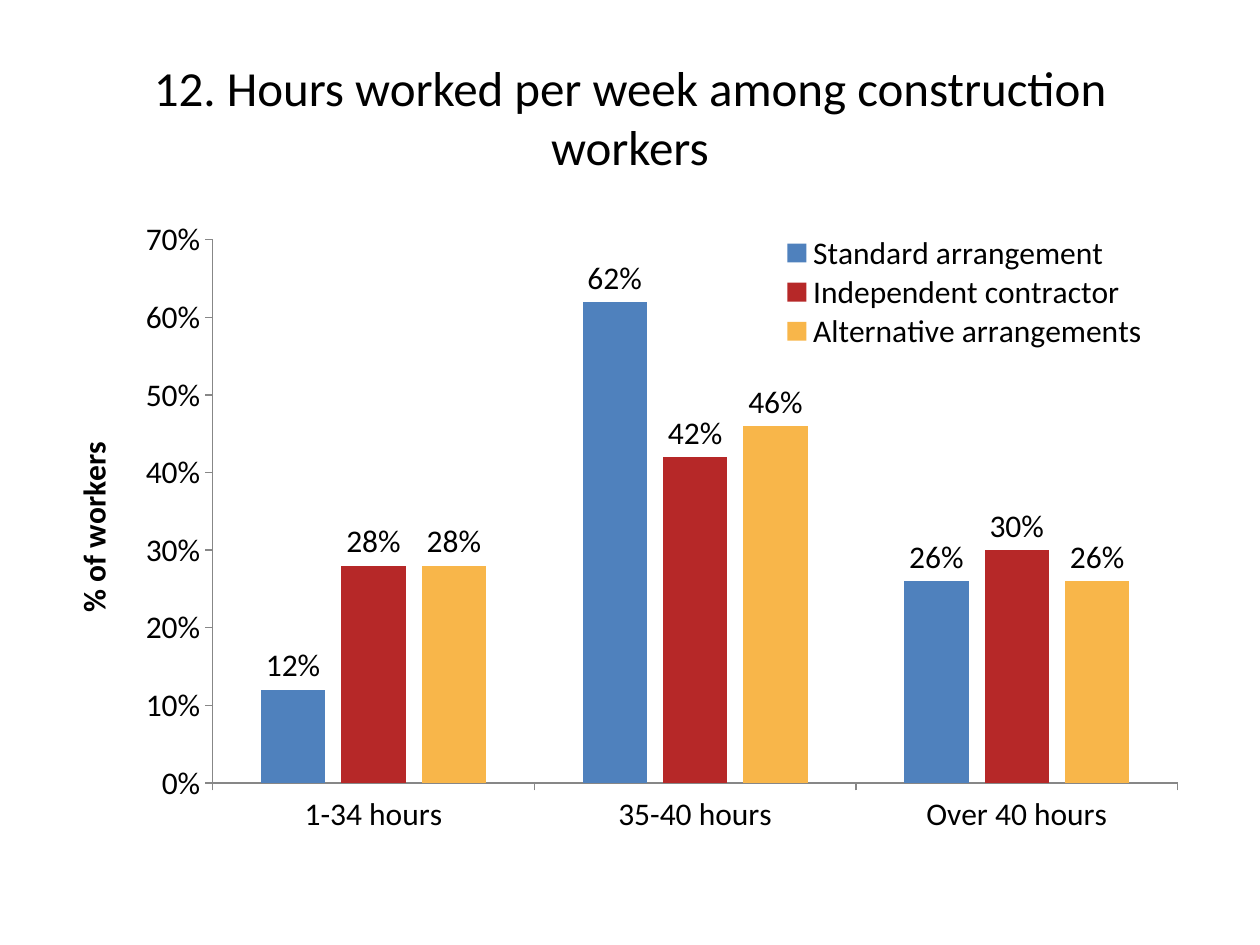
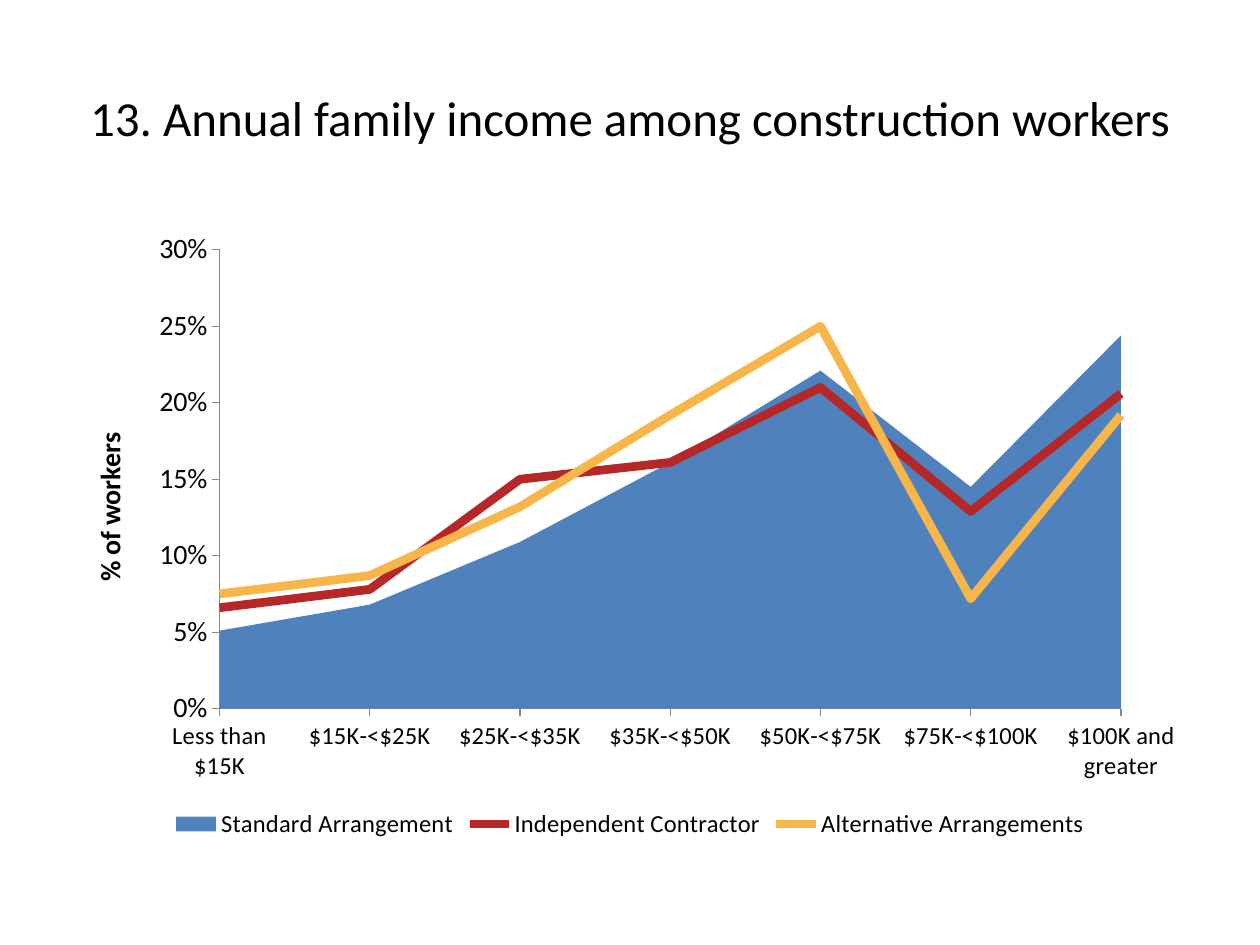
from pptx import Presentation, util as u
from pptx.chart.data import CategoryChartData
from pptx.dml.color import RGBColor
from pptx.enum import chart as ch, text
from pptx.oxml import parse_xml
from pptx.oxml.ns import nsdecls, qn

FONT = "Calibri"
BLACK, GRAY = "000000", "878787"
COLORS = ["4F81BD", "B62828", "F8B64A"]
PERCENT = '#,##0"%"'


def color(code):
    return RGBColor.from_string(code)


def place(parent, index, box, inner=""):
    """Give a plot area or legend a fixed box, as shares of the chart."""
    for old in parent.findall(qn("c:layout")):
        parent.remove(old)
    modes = "".join(f'<c:{side}Mode val="edge"/>' for side in "xy")
    sizes = "".join(f'<c:{side} val="{size}"/>' for side, size in zip("xywh", box))
    parent.insert(index, parse_xml(
        f'<c:layout {nsdecls("c")}><c:manualLayout>{inner}{modes}{sizes}'
        "</c:manualLayout></c:layout>"))


hours = dict(
    title="12. Hours worked per week among construction workers",
    kind=ch.XL_CHART_TYPE.COLUMN_CLUSTERED, size=18, val_size=18, top=70, step=10,
    plot=(0.132, 0.031, 0.851, 0.871), legend=ch.XL_LEGEND_POSITION.TOP,
    cats=["1-34 hours", "35-40 hours", "Over 40 hours"],
    series={
        "Standard arrangement": (12, 62, 26),
        "Independent contractor": (28, 42, 30),
        "Alternative arrangements": (28, 46, 26),
    })
income = dict(
    title="13. Annual family income among construction workers",
    kind=ch.XL_CHART_TYPE.AREA_STACKED, size=14, val_size=16, top=30, step=5,
    plot=(0.138, 0.047, 0.795, 0.736), legend=ch.XL_LEGEND_POSITION.BOTTOM,
    cats=["Less than $15K", "$15K-<$25K", "$25K-<$35K", "$35K-<$50K",
          "$50K-<$75K", "$75K-<$100K", "$100K and greater"],
    series={
        "Standard Arrangement": (5.1, 6.8, 10.9, 16.1, 22.1, 14.5, 24.4),
        "Independent Contractor": (6.6, 7.8, 15, 16.1, 21, 12.9, 20.6),
        "Alternative Arrangements": (7.5, 8.7, 13.2, 19.2, 25, 7.2, 19.2),
    })

deck = Presentation()
deck.slide_width, deck.slide_height = u.Inches(10), u.Inches(7.5)
charts = []

# Title, chart and axes, alike on both slides
for page in (hours, income):
    slide = deck.slides.add_slide(deck.slide_layouts[6])
    frame = slide.shapes.add_textbox(
        u.Inches(0.5), u.Inches(0.3), u.Inches(9), u.Inches(1.25)).text_frame
    frame.word_wrap = True
    frame.vertical_anchor = text.MSO_ANCHOR.MIDDLE
    title = frame.paragraphs[0]
    title.text = page["title"]
    title.alignment = text.PP_ALIGN.CENTER
    title.font.name, title.font.size = FONT, u.Pt(28)
    title.font.color.rgb = color(BLACK)

    data = CategoryChartData()
    data.categories = page["cats"]
    for name, values in page["series"].items():
        data.add_series(name, values)
    chart = slide.shapes.add_chart(
        page["kind"], u.Inches(0.5), u.Inches(1.75),
        u.Inches(9), u.Inches(4.95), data).chart
    charts.append(chart)
    chart.has_title = False
    chart.font.name, chart.font.size = FONT, u.Pt(page["size"])
    chart.font.color.rgb = color(BLACK)
    chart.plots[0].vary_by_categories = False
    place(chart.element.find(".//" + qn("c:plotArea")), 0, page["plot"],
          '<c:layoutTarget val="inner"/>')

    chart.has_legend = True
    chart.legend.position = page["legend"]
    chart.legend.include_in_layout = False

    for axis in (chart.category_axis, chart.value_axis):
        axis.has_major_gridlines = False
        axis.major_tick_mark = ch.XL_TICK_MARK.OUTSIDE
        axis.minor_tick_mark = ch.XL_TICK_MARK.NONE
        axis.format.line.color.rgb = color(GRAY)
        axis.format.line.width = u.Pt(0.75)
    scale = chart.value_axis
    scale.minimum_scale, scale.maximum_scale = 0, page["top"]
    scale.major_unit = page["step"]
    scale.tick_labels.number_format = PERCENT
    scale.tick_labels.number_format_is_linked = False
    scale.tick_labels.font.size = u.Pt(page["val_size"])
    label = scale.axis_title.text_frame.paragraphs[0]
    label.text = "% of workers"
    label.font.name, label.font.size = FONT, u.Pt(page["val_size"])
    label.font.bold = True
    label.font.color.rgb = color(BLACK)

bars, mixed = charts

# Hours: labelled columns with the legend inside the plot
place(bars.element.find(".//" + qn("c:legend")), 1, (0.62, 0.02, 0.35, 0.19))
plot = bars.plots[0]
plot.gap_width, plot.overlap = 150, -25
for series, shade in zip(plot.series, COLORS):
    series.format.fill.solid()
    series.format.fill.fore_color.rgb = color(shade)
    labels = series.data_labels
    labels.show_value = True
    labels.number_format, labels.number_format_is_linked = PERCENT, False
    labels.position = ch.XL_LABEL_POSITION.OUTSIDE_END

# Income: the first series stays an area, the others become lines
area = mixed.element.find(".//" + qn("c:areaChart"))
lines = parse_xml(
    f'<c:lineChart {nsdecls("c")}><c:grouping val="standard"/>'
    '<c:varyColors val="0"/></c:lineChart>')
for item in area.findall(qn("c:ser"))[1:]:
    lines.append(item)
lines.append(parse_xml(f'<c:marker {nsdecls("c")} val="1"/>'))
for axis in area.findall(qn("c:axId")):
    lines.append(parse_xml(f'<c:axId {nsdecls("c")} val="{axis.get("val")}"/>'))
area.addnext(lines)
mixed.element.find(".//" + qn("c:crossBetween")).set("val", "midCat")

base, trend = mixed.plots
fill = base.series[0].format.fill
fill.solid()
fill.fore_color.rgb = color(COLORS[0])
for series, shade in zip(trend.series, COLORS[1:]):
    series.format.line.color.rgb = color(shade)
    series.format.line.width = u.Pt(5)
    series.marker.style = ch.XL_MARKER_STYLE.NONE
    series.smooth = False

deck.save("out.pptx")
